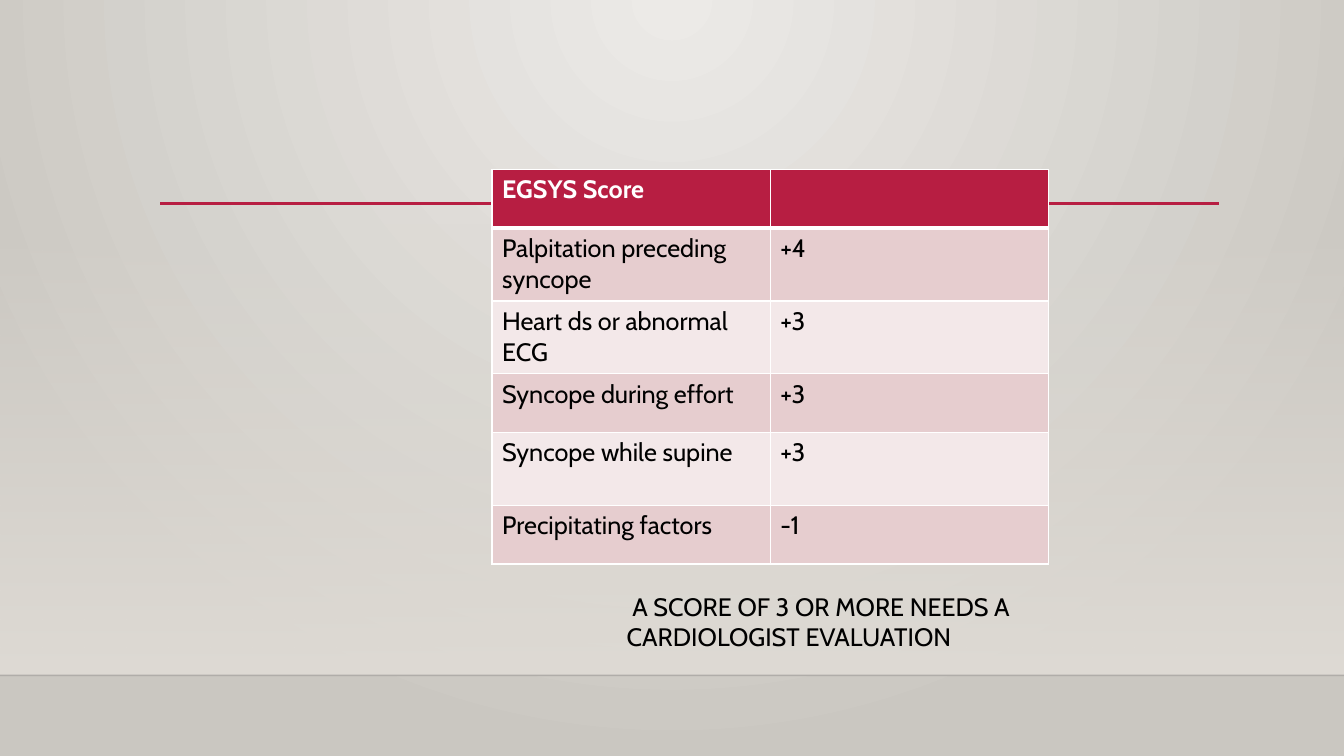
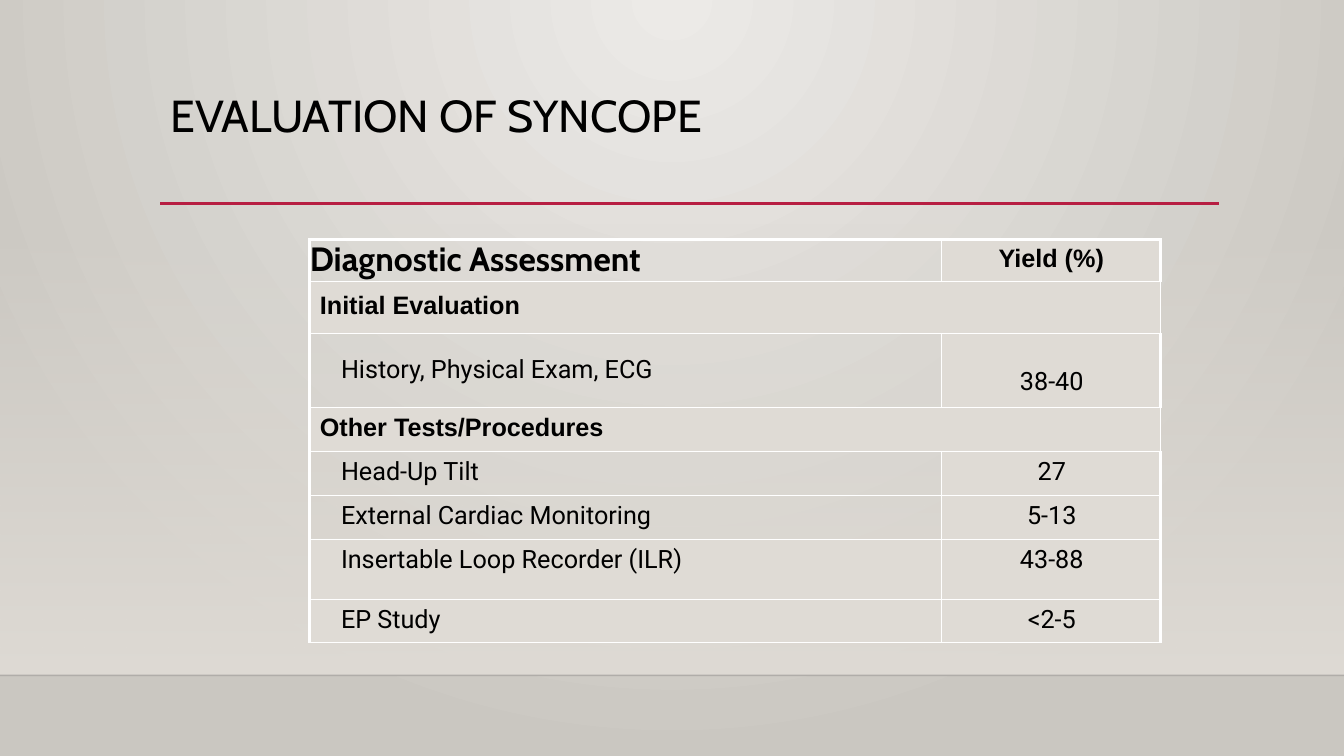
from dataclasses import dataclass

from lxml.etree import SubElement
from pptx import Presentation
from pptx.dml.color import RGBColor
from pptx.enum.shapes import MSO_CONNECTOR, MSO_SHAPE
from pptx.enum.text import MSO_ANCHOR, MSO_AUTO_SIZE, PP_ALIGN
from pptx.oxml import parse_xml
from pptx.oxml.ns import nsdecls, qn
from pptx.util import Pt

WIDTH, HEIGHT = 960, 540
FLOOR_TOP = 482.4
BLACK, WHITE, RED, SAND = "000000", "FFFFFF", "B71E42", "DFDBD5"
PINK, PALE_PINK = "E6CDCF", "F3E8E9"


@dataclass(frozen=True)
class CellStyle:
    """Look of one table cell; margins are left, top, right, bottom."""
    fill: str | None = None
    font: str = "Cabin"
    size: float = 18
    bold: bool = False
    color: str = BLACK
    align: PP_ALIGN = PP_ALIGN.LEFT
    margins: tuple = (7.2, 3.6, 7.2, 3.6)


def rgb(value):
    """Turn a hex string into a colour."""
    return RGBColor.from_string(value)


def format_text(para, font, size, color=BLACK, bold=False, align=PP_ALIGN.LEFT):
    """Format a paragraph and all of its runs."""
    para.alignment = align
    for span in para.runs:
        span.font.name = font
        span.font.size = Pt(size)
        span.font.bold = bold
        span.font.color.rgb = rgb(color)


def gradient(stops, direction):
    """Build a gradient fill from (position, colour, alpha) stops."""
    marks = "".join(
        f'<a:gs pos="{position * 1000}"><a:srgbClr val="{color}">'
        f'<a:alpha val="{alpha * 1000}"/></a:srgbClr></a:gs>'
        for position, color, alpha in stops)
    return parse_xml(f'<a:gradFill {nsdecls("a")} rotWithShape="1">'
                     f'<a:gsLst>{marks}</a:gsLst>{direction}</a:gradFill>')


def set_gradient(fill, owner, stops, direction):
    """Give a fill inside the owner element a custom gradient."""
    fill.gradient()
    old = owner.find(".//" + qn("a:gradFill"))
    old.getparent().replace(old, gradient(stops, direction))


def add_line(page, left, right, top, color, width, alpha=100):
    """Draw a horizontal line without a shadow."""
    line = page.shapes.add_connector(
        MSO_CONNECTOR.STRAIGHT, Pt(left), Pt(top), Pt(right), Pt(top))
    line.line.color.rgb = rgb(color)
    line.line.width = Pt(width)
    properties = line._element.spPr
    SubElement(properties.find(".//" + qn("a:srgbClr")), qn("a:alpha"),
               val=str(alpha * 1000))
    SubElement(properties, qn("a:effectLst"))
    return line


def decorate_master(deck, page):
    """Put the backdrop, floor line and title rule on the slide master."""
    master = deck.slide_master
    set_gradient(master.background.fill, master._element,
                 [(0, "ECEAE7", 100), (100, "CAC7C1", 100)],
                 '<a:path path="circle"><a:fillToRect l="43000" t="0" '
                 'r="43000" b="100000"/></a:path>')
    wall = page.shapes.add_shape(MSO_SHAPE.RECTANGLE, 0, Pt(159),
                                 Pt(WIDTH), Pt(FLOOR_TOP - 159))
    wall.shadow.inherit = False
    wall.line.fill.background()
    set_gradient(wall.fill, wall._element, [(0, SAND, 0), (100, SAND, 100)],
                 '<a:lin ang="5400000" scaled="0"/>')
    floor_line = add_line(page, 0, WIDTH, FLOOR_TOP, "000001", 1, 20)
    title_rule = add_line(page, 114.5, 871, 145.4, RED, 2.5)
    for shape in (wall, floor_line, title_rule):
        master.shapes._spTree.append(shape._element)


def set_title(page, text):
    """Fill and place the title placeholder."""
    title = page.shapes.title
    title.left, title.top = Pt(114.5), Pt(63.4)
    title.width, title.height = Pt(756), Pt(82.8)
    frame = title.text_frame
    frame.text = text
    frame.auto_size = MSO_AUTO_SIZE.NONE
    frame.vertical_anchor = MSO_ANCHOR.TOP
    frame.paragraphs[0].line_spacing = 0.9
    format_text(frame.paragraphs[0], "Cabin", 32)


def add_caption(page, left, top, width, height, text, first_indent):
    """Add a wrapped text box whose first line is indented."""
    box = page.shapes.add_textbox(Pt(left), Pt(top), Pt(width), Pt(height))
    frame = box.text_frame
    frame.word_wrap = True
    frame.auto_size = MSO_AUTO_SIZE.SHAPE_TO_FIT_TEXT
    para = frame.paragraphs[0]
    para.text = text
    para._p.get_or_add_pPr().set("indent", str(Pt(first_indent)))
    format_text(para, "Cabin", 18)


def set_borders(cell, widths):
    """Draw white cell borders from left, right, top and bottom widths."""
    properties = cell._tc.get_or_add_tcPr()
    for index, (side, width) in enumerate(zip("LRTB", widths)):
        properties.insert(index, parse_xml(
            f'<a:ln{side} {nsdecls("a")} w="{Pt(width)}"><a:solidFill>'
            f'<a:srgbClr val="{WHITE}"/></a:solidFill></a:ln{side}>'))


def fill_cell(cell, text, style):
    """Write and format one table cell."""
    (cell.margin_left, cell.margin_top,
     cell.margin_right, cell.margin_bottom) = map(Pt, style.margins)
    if style.fill:
        cell.fill.solid()
        cell.fill.fore_color.rgb = rgb(style.fill)
    else:
        cell.fill.background()
    para = cell.text_frame.paragraphs[0]
    para.text = text
    format_text(para, style.font, style.size, style.color, style.bold, style.align)


def add_grid(page, left, top, columns, heights, rows, outer=1, header_line=1):
    """Add a table; a row with a single cell spans all columns."""
    table = page.shapes.add_table(
        len(rows), len(columns), Pt(left), Pt(top),
        Pt(sum(columns)), Pt(sum(heights))).table
    table.first_row = table.horz_banding = False
    for column, width in zip(table.columns, columns):
        column.width = Pt(width)
    last = len(columns) - 1
    for index, (height, row) in enumerate(zip(heights, rows)):
        table.rows[index].height = Pt(height)
        for position, (text, style) in enumerate(row):
            fill_cell(table.cell(index, position), text, style)
        if len(row) == 1:
            table.cell(index, 0).merge(table.cell(index, last))
        upper = {0: outer, 1: header_line}.get(index, 1)
        lower = header_line if index == 0 else 1
        for position in range(len(columns)):
            set_borders(table.cell(index, position),
                        (outer if position == 0 else 1,
                         outer if position == last else 1, upper, lower))


def build_score(page):
    """Build the EGSYS score slide."""
    header = CellStyle(RED, bold=True, color=WHITE)
    scores = [("Palpitation preceding syncope", "+4"),
              ("Heart ds or abnormal ECG", "+3"),
              ("Syncope during effort", "+3"),
              ("Syncope while supine", "+3"),
              ("Precipitating factors", "-1")]
    bands = [CellStyle(PINK), CellStyle(PALE_PINK)]
    rows = [[("EGSYS Score", header), ("", header)]]
    rows += [[(text, bands[index % 2]) for text in score]
             for index, score in enumerate(scores)]
    add_grid(page, 351.5, 121, [198.7, 198.7], [42, 52, 52, 42, 52, 42],
             rows, header_line=3)
    add_caption(page, 440.6, 419, 350.6, 51,
                "A SCORE OF 3 OR MORE NEEDS A CARDIOLOGIST EVALUATION", 4)


def test_row(name, result, fill=None, name_top=4.3, result_top=4.3):
    """Return the cells of one test and its yield."""
    return [(name, CellStyle(fill, "Roboto", margins=(22.3, name_top, 0, 0))),
            (result, CellStyle(SAND, "Roboto", align=PP_ALIGN.CENTER,
                               margins=(1.4, result_top, 0, 0)))]


def section_row(text, top):
    """Return the single cell of a section heading."""
    return [(text, CellStyle(SAND, "Arial", bold=True, margins=(7.2, top, 0, 0)))]


def build_evaluation(page):
    """Build the diagnostic yield slide."""
    set_title(page, "EVALUATION OF SYNCOPE")
    rows = [
        [("Diagnostic Assessment",
          CellStyle(size=24, bold=True, margins=(0, 0, 0, 0))),
         ("Yield (%)", CellStyle(SAND, "Arial", bold=True, align=PP_ALIGN.CENTER,
                                 margins=(0.7, 3.6, 0, 0)))],
        section_row("Initial Evaluation", 7.2),
        test_row("History, Physical Exam, ECG", "38-40",
                 name_top=15, result_top=24),
        section_row("Other Tests/Procedures", 4.4),
        test_row("Head-Up Tilt", "27"),
        test_row("External Cardiac Monitoring", "5-13"),
        test_row("Insertable Loop Recorder (ILR)", "43-88", SAND),
        test_row("EP Study", "<2-5", SAND),
    ]
    add_grid(page, 221.3, 171, [451.2, 156.2],
             [30, 37.5, 52.5, 31.5, 31.5, 31.5, 42.5, 31], rows, outer=2.25)


def main():
    """Build and save the deck."""
    deck = Presentation()
    deck.slide_width, deck.slide_height = Pt(WIDTH), Pt(HEIGHT)
    score_page = deck.slides.add_slide(deck.slide_layouts[6])
    decorate_master(deck, score_page)
    build_score(score_page)
    build_evaluation(deck.slides.add_slide(deck.slide_layouts[5]))
    deck.save("out.pptx")


if __name__ == "__main__":
    main()
